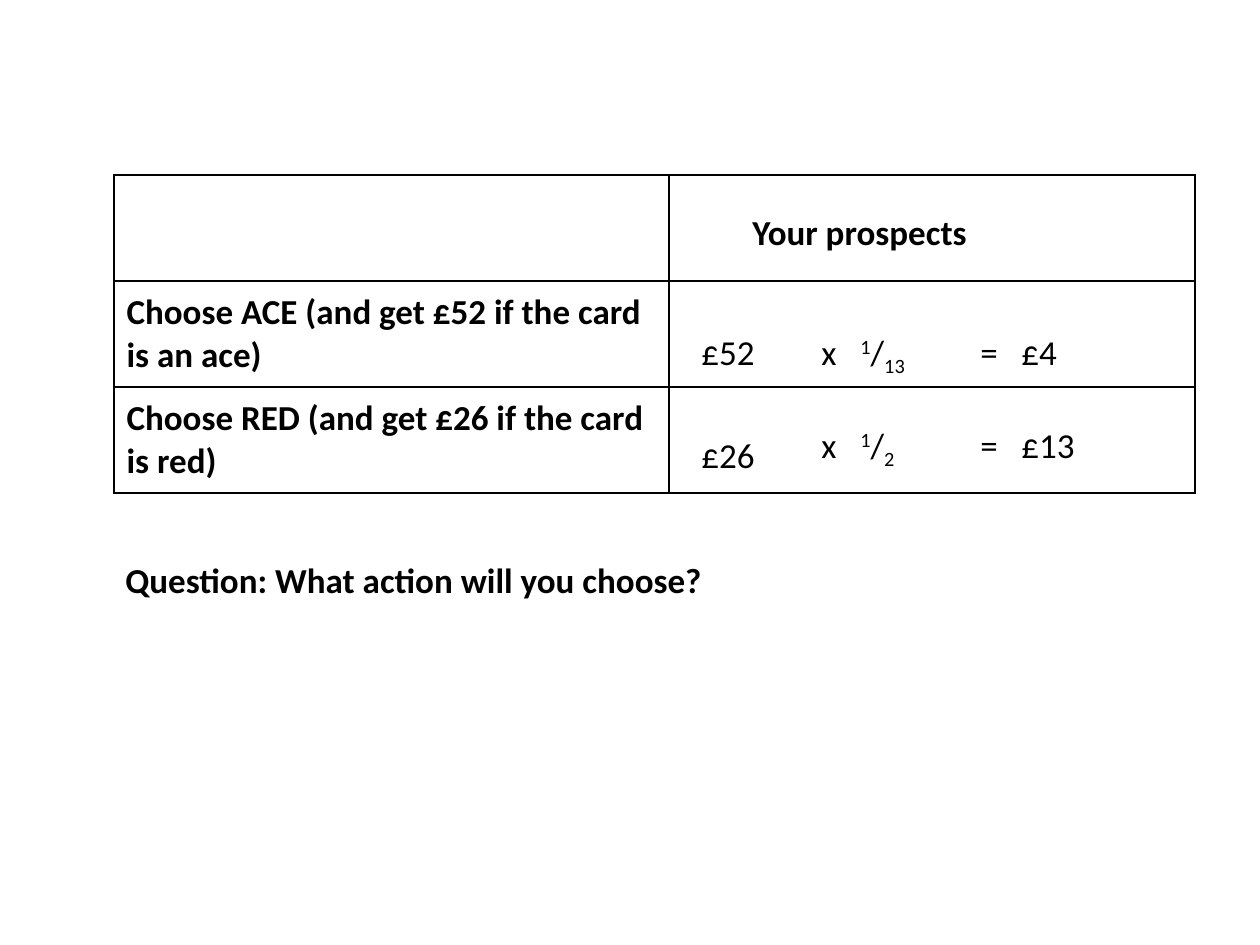
"""Build a slide comparing the prospects of two card bets."""
import pptx
import pptx.dml.color
import pptx.enum.text
import pptx.util
from lxml import etree
from pptx.oxml.ns import qn

PX = 914400 // 126
BLACK = pptx.dml.color.RGBColor(0, 0, 0)


def style(para, bold=False):
    para.font.name = "Calibri"
    para.font.size = pptx.util.Pt(20)
    para.font.bold = bold
    para.font.color.rgb = BLACK


def add_text(left, top, width, spans, bold=False, tab=0):
    box = page.shapes.add_textbox(left * PX, top * PX, width * PX, 55 * PX)
    box.text_frame.word_wrap = True
    para = box.text_frame.paragraphs[0]
    if tab:
        stops = etree.SubElement(para._p.get_or_add_pPr(), qn("a:tabLst"))
        etree.SubElement(stops, qn("a:tab"), pos=str(tab * PX), algn="l")
    style(para, bold)
    for text, baseline in spans:
        span = para.add_run()
        span.text = text
        if baseline:
            span._r.get_or_add_rPr().set("baseline", str(baseline * 1000))


deck = pptx.Presentation()
deck.slide_width = 1260 * PX
deck.slide_height = 945 * PX
page = deck.slides.add_slide(deck.slide_layouts[6])

table = page.shapes.add_table(3, 2, 114 * PX, 175 * PX, 1081 * PX, 318 * PX).table
table.first_row = False
table.horz_banding = False
for column, width in zip(table.columns, (555, 526)):
    column.width = width * PX
for row in table.rows:
    row.height = 106 * PX

for cell in table.iter_cells():
    properties = cell._tc.get_or_add_tcPr()
    for side in ("lnL", "lnR", "lnT", "lnB"):
        line = etree.SubElement(properties, qn(f"a:{side}"), w=str(pptx.util.Pt(1)))
        fill = etree.SubElement(line, qn("a:solidFill"))
        etree.SubElement(fill, qn("a:srgbClr"), val=str(BLACK))
    cell.fill.background()

choices = (
    "Choose ACE (and get £52 if the card is an ace)",
    "Choose RED (and get £26 if the card is red)",
)
for index, choice in enumerate(choices, start=1):
    cell = table.cell(index, 0)
    cell.vertical_anchor = pptx.enum.text.MSO_ANCHOR.MIDDLE
    cell.text = choice
    para = cell.text_frame.paragraphs[0]
    para.space_before = para.space_after = pptx.util.Pt(12)
    style(para, bold=True)

add_text(740, 204, 387, [("Your prospects", 0)], bold=True)
prospects = (
    ("£52", 324, "13", "£4", 324),
    ("£26", 427, "2", "£13", 417),
)
for stake, stake_top, odds, value, top in prospects:
    add_text(689, stake_top, 118, [(stake, 0)])
    add_text(809, top, 119, [("x\t", 0), ("1", 30), ("/", 0), (odds, -25)], tab=39)
    add_text(968, top, 159, [(f"=\t{value}", 0)], tab=41)
add_text(113, 552, 1081, [("Question: What action will you choose?", 0)], bold=True)

deck.save("out.pptx")
